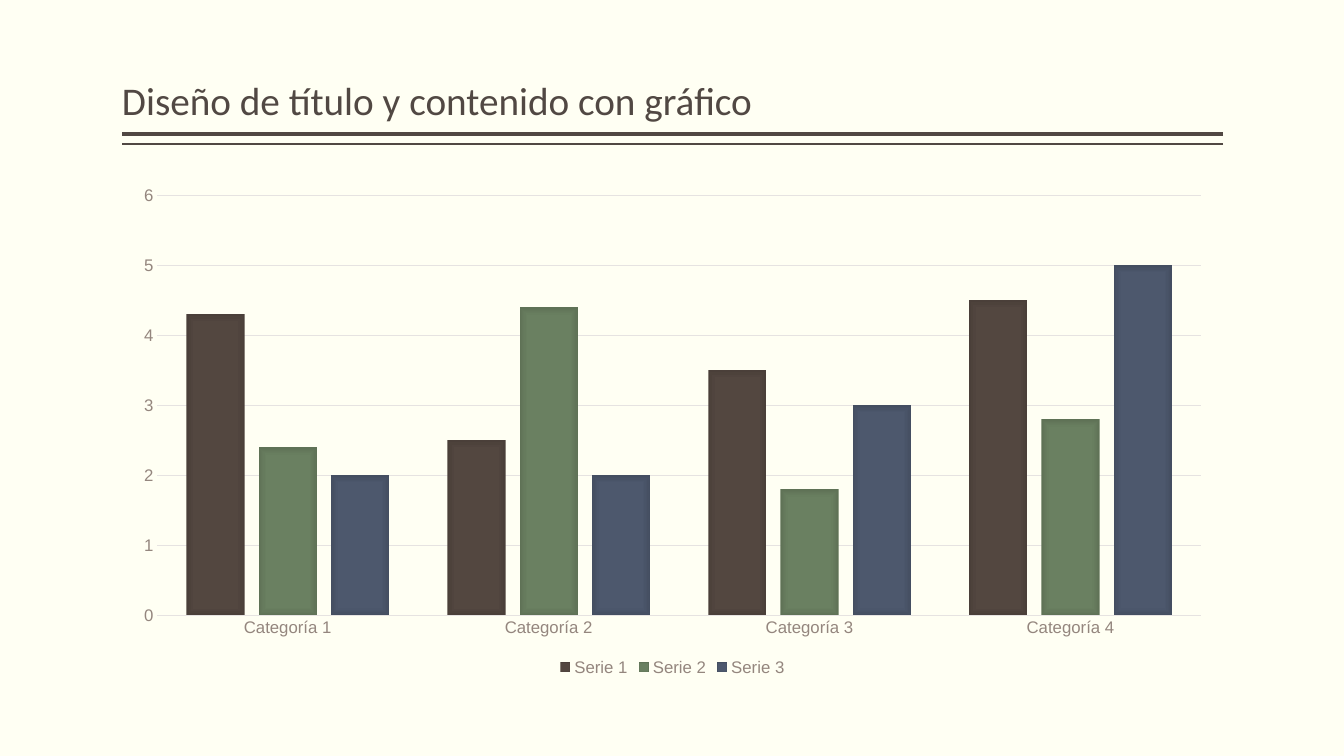
from lxml import etree
from pptx import Presentation
from pptx.chart.data import CategoryChartData
from pptx.dml.color import RGBColor
from pptx.enum.chart import XL_CHART_TYPE, XL_LEGEND_POSITION, XL_TICK_MARK
from pptx.enum.shapes import MSO_CONNECTOR
from pptx.enum.text import MSO_ANCHOR
from pptx.oxml import parse_xml
from pptx.oxml.ns import qn
from pptx.util import Inches, Pt

COLUMNS = XL_CHART_TYPE.COLUMN_CLUSTERED
LEGEND_BOTTOM = XL_LEGEND_POSITION.BOTTOM
NO_TICK = XL_TICK_MARK.NONE
STRAIGHT = MSO_CONNECTOR.STRAIGHT
BOTTOM = MSO_ANCHOR.BOTTOM
DRAWING = "http://schemas.openxmlformats.org/drawingml/2006/main"

BACKGROUND = "FFFFF3"
DARK = "514843"
LABEL = "94867E"
GRID = "E6E3E1"

LEFT, WIDTH = 1.21, 10.92
CATEGORIES = [f"Categoría {number}" for number in range(1, 5)]
SERIES = [
    ("Serie 1", (4.3, 2.5, 3.5, 4.5), ("544740", "534740", "4A3F39")),
    ("Serie 2", (2.4, 4.4, 1.8, 2.8), ("6B8162", "6A8061", "5F7256")),
    ("Serie 3", (2, 2, 3, 5), ("4E596E", "4D586D", "444E61")),
]
STOPS = (0, 71, 100)


def color(value):
    return RGBColor.from_string(value)


def format_font(font, size, value, name="Arial"):
    font.size = Pt(size)
    font.name = name
    font.color.rgb = color(value)


def add_text(slide, box, text, size=28, value=DARK, name="Calibri", spacing=0.9):
    shape = slide.shapes.add_textbox(*map(Inches, box))
    frame = shape.text_frame
    frame.word_wrap = True
    frame.vertical_anchor = BOTTOM
    frame.margin_left = frame.margin_right = 0
    paragraph = frame.paragraphs[0]
    paragraph.line_spacing = spacing
    run = paragraph.add_run()
    run.text = text
    format_font(run.font, size, value, name)


def add_rule(slide, left, top, width, weight):
    line = slide.shapes.add_connector(
        STRAIGHT, Inches(left + width), Inches(top), Inches(left), Inches(top)
    )
    line.line.color.rgb = color(DARK)
    line.line.width = Pt(weight)
    etree.SubElement(line._element.spPr, qn("a:effectLst"))


def add_header(slide, left, top, width, height):
    add_rule(slide, left, top + height + 0.05, width, 3)
    add_rule(slide, left, top + height + 0.15, width, 1)
    add_text(slide, (left, top, width, height), "Diseño de título y contenido con gráfico")


def fill_with_gradient(series, shades):
    stops = "".join(
        f'<a:gs pos="{position * 1000}"><a:srgbClr val="{shade}"/></a:gs>'
        for position, shade in zip(STOPS, shades)
    )
    gradient = parse_xml(
        f'<a:gradFill xmlns:a="{DRAWING}" rotWithShape="1"><a:gsLst>{stops}</a:gsLst>'
        '<a:path path="rect"><a:fillToRect l="50000" t="50000" r="50000" b="50000"/>'
        "</a:path></a:gradFill>"
    )
    series.format.line.fill.background()
    series._element.get_or_add_spPr().insert(0, gradient)


def format_axis(axis):
    axis.major_tick_mark = axis.minor_tick_mark = NO_TICK
    format_font(axis.tick_labels.font, 12, LABEL)


def add_column_chart(slide, left, top, width, height):
    data = CategoryChartData()
    data.categories = CATEGORIES
    for name, values, _ in SERIES:
        data.add_series(name, values)
    chart = slide.shapes.add_chart(
        COLUMNS, *map(Inches, (left, top, width, height)), data
    ).chart
    format_font(chart.font, 10, DARK)
    chart.has_title = False

    chart.has_legend = True
    chart.legend.position = LEGEND_BOTTOM
    chart.legend.include_in_layout = False
    format_font(chart.legend.font, 12, LABEL)

    format_axis(chart.category_axis)
    chart.category_axis.format.line.color.rgb = color(GRID)
    chart.category_axis.format.line.width = Pt(1)

    value_axis = chart.value_axis
    format_axis(value_axis)
    value_axis.minimum_scale, value_axis.maximum_scale = 0, 6
    value_axis.major_unit = 1
    value_axis.format.line.fill.background()
    value_axis.has_major_gridlines = True
    value_axis.major_gridlines.format.line.color.rgb = color(GRID)
    value_axis.major_gridlines.format.line.width = Pt(0.75)

    plot = chart.plots[0]
    plot.gap_width = 100
    plot.overlap = -24
    plot.vary_by_categories = False
    for series, (_, _, shades) in zip(plot.series, SERIES):
        series.invert_if_negative = False
        fill_with_gradient(series, shades)


def main():
    presentation = Presentation()
    presentation.slide_width = Inches(13.33)
    presentation.slide_height = Inches(7.5)
    slide = presentation.slides.add_slide(presentation.slide_layouts[6])
    slide.background.fill.solid()
    slide.background.fill.fore_color.rgb = color(BACKGROUND)
    add_header(slide, LEFT, 0.08, WIDTH, 1.2)
    add_column_chart(slide, LEFT, 1.75, WIDTH, 5)
    presentation.save("out.pptx")


if __name__ == "__main__":
    main()
